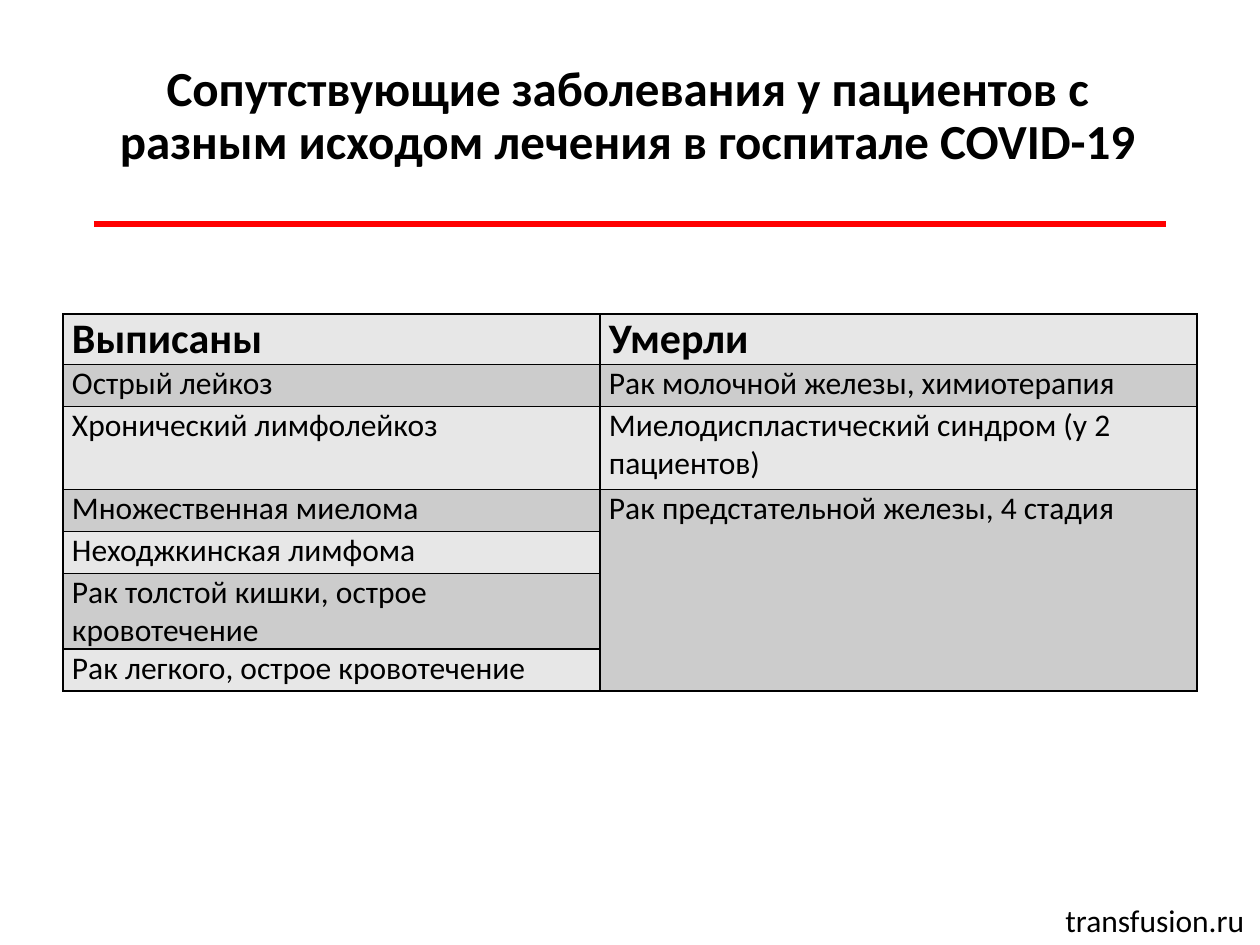
"""Build the slide on comorbidities by treatment outcome."""
import dataclasses

import lxml.etree
import pptx
import pptx.dml.color
import pptx.enum.shapes
import pptx.enum.text
import pptx.oxml.ns
import pptx.util

EMU_PER_PX = 914400 // 126


@dataclasses.dataclass(frozen=True)
class Theme:
    """Colours, font and type sizes of the slide."""
    font: str = "Calibri"
    ink: str = "000000"
    rule: str = "FF0000"
    bands: tuple = ("E7E7E7", "CCCCCC")
    title: int = 28
    header: int = 24
    body: int = 18
    rule_width: int = 3
    border_width: int = 1


THEME = Theme()
COLUMN_WIDTHS = (537, 597)
ROW_HEIGHTS = (42, 42, 83, 42, 42, 42, 42)
DISCHARGED = (
    "Выписаны",
    "Острый лейкоз",
    "Хронический лимфолейкоз",
    "Множественная миелома",
    "Неходжкинская лимфома",
    "Рак толстой кишки, острое кровотечение",
    "Рак легкого, острое кровотечение",
)
DIED = (
    "Умерли",
    "Рак молочной железы, химиотерапия",
    "Миелодиспластический синдром (у 2 пациентов)",
    "Рак предстательной железы, 4 стадия",
)


def px(length):
    """Turn px into EMU."""
    return pptx.util.Emu(length * EMU_PER_PX)


def color(code):
    """Turn a hex code into a colour."""
    return pptx.dml.color.RGBColor.from_string(code)


def add_run(para, text, size, bold=False):
    """Add one formatted run to a paragraph."""
    span = para.add_run()
    span.text = text
    span.font.name = THEME.font
    span.font.size = pptx.util.Pt(size)
    span.font.bold = bold
    span.font.color.rgb = color(THEME.ink)


def set_title(page, text, left, top, width, height):
    """Place and format the title placeholder."""
    box = page.shapes.title
    box.left, box.top, box.width, box.height = map(px, (left, top, width, height))
    frame = box.text_frame
    frame.word_wrap = True
    frame.auto_size = pptx.enum.text.MSO_AUTO_SIZE.NONE
    frame.vertical_anchor = pptx.enum.text.MSO_ANCHOR.MIDDLE
    para = frame.paragraphs[0]
    para.alignment = pptx.enum.text.PP_ALIGN.CENTER
    para.line_spacing = 0.9
    para.space_after = pptx.util.Pt(6)
    add_run(para, text, THEME.title, bold=True)


def add_rule(page, left, right, y):
    """Draw the horizontal rule under the title."""
    straight = pptx.enum.shapes.MSO_CONNECTOR.STRAIGHT
    rule = page.shapes.add_connector(straight, px(left), px(y), px(right), px(y))
    rule.line.color.rgb = color(THEME.rule)
    rule.line.width = pptx.util.Pt(THEME.rule_width)
    properties = rule._element.spPr
    lxml.etree.SubElement(properties, pptx.oxml.ns.qn("a:effectLst"))


def add_label(page, text, left, top, width, height):
    """Add a one-line text box."""
    box = page.shapes.add_textbox(*map(px, (left, top, width, height)))
    frame = box.text_frame
    frame.word_wrap = False
    frame.auto_size = pptx.enum.text.MSO_AUTO_SIZE.SHAPE_TO_FIT_TEXT
    add_run(frame.paragraphs[0], text, THEME.body)


def set_borders(cell):
    """Draw a thin line on every side of a cell."""
    qn = pptx.oxml.ns.qn
    properties = cell._tc.get_or_add_tcPr()
    for side in ("a:lnL", "a:lnR", "a:lnT", "a:lnB"):
        line = lxml.etree.SubElement(properties, qn(side))
        line.set("w", str(pptx.util.Pt(THEME.border_width)))
        fill = lxml.etree.SubElement(line, qn("a:solidFill"))
        lxml.etree.SubElement(fill, qn("a:srgbClr")).set("val", THEME.ink)


def style_cell(cell, row):
    """Set the margins, borders and band colour of a cell."""
    cell.margin_left = cell.margin_right = px(9)
    cell.margin_top = cell.margin_bottom = 0
    set_borders(cell)
    cell.fill.solid()
    cell.fill.fore_color.rgb = color(THEME.bands[row % 2])


def add_diagnoses(page, left, top):
    """Add the table of diagnoses by outcome."""
    size = px(sum(COLUMN_WIDTHS)), px(sum(ROW_HEIGHTS))
    table = page.shapes.add_table(
        len(ROW_HEIGHTS), len(COLUMN_WIDTHS), px(left), px(top), *size).table
    for column, width in zip(table.columns, COLUMN_WIDTHS):
        column.width = px(width)
    for row, height in enumerate(ROW_HEIGHTS):
        table.rows[row].height = px(height)
        for cell in table.rows[row].cells:
            style_cell(cell, row)
    for column, diagnoses in enumerate((DISCHARGED, DIED)):
        for row, text in enumerate(diagnoses):
            para = table.cell(row, column).text_frame.paragraphs[0]
            add_run(para, text, THEME.body if row else THEME.header, bold=row == 0)
    table.cell(len(DIED) - 1, 1).merge(table.cell(len(ROW_HEIGHTS) - 1, 1))


def main():
    """Build and save the deck."""
    deck = pptx.Presentation()
    deck.slide_width, deck.slide_height = px(1260), px(945)
    page = deck.slides.add_slide(deck.slide_layouts.get_by_name("Title Only"))
    set_title(
        page,
        "Сопутствующие заболевания у пациентов с разным исходом лечения "
        "в госпитале COVID-19",
        89, 74, 1077, 86)
    add_rule(page, 94, 1166, 224)
    add_label(page, "transfusion.ru", 1053, 895, 207, 50)
    add_diagnoses(page, 63, 314)
    deck.save("out.pptx")


if __name__ == "__main__":
    main()
